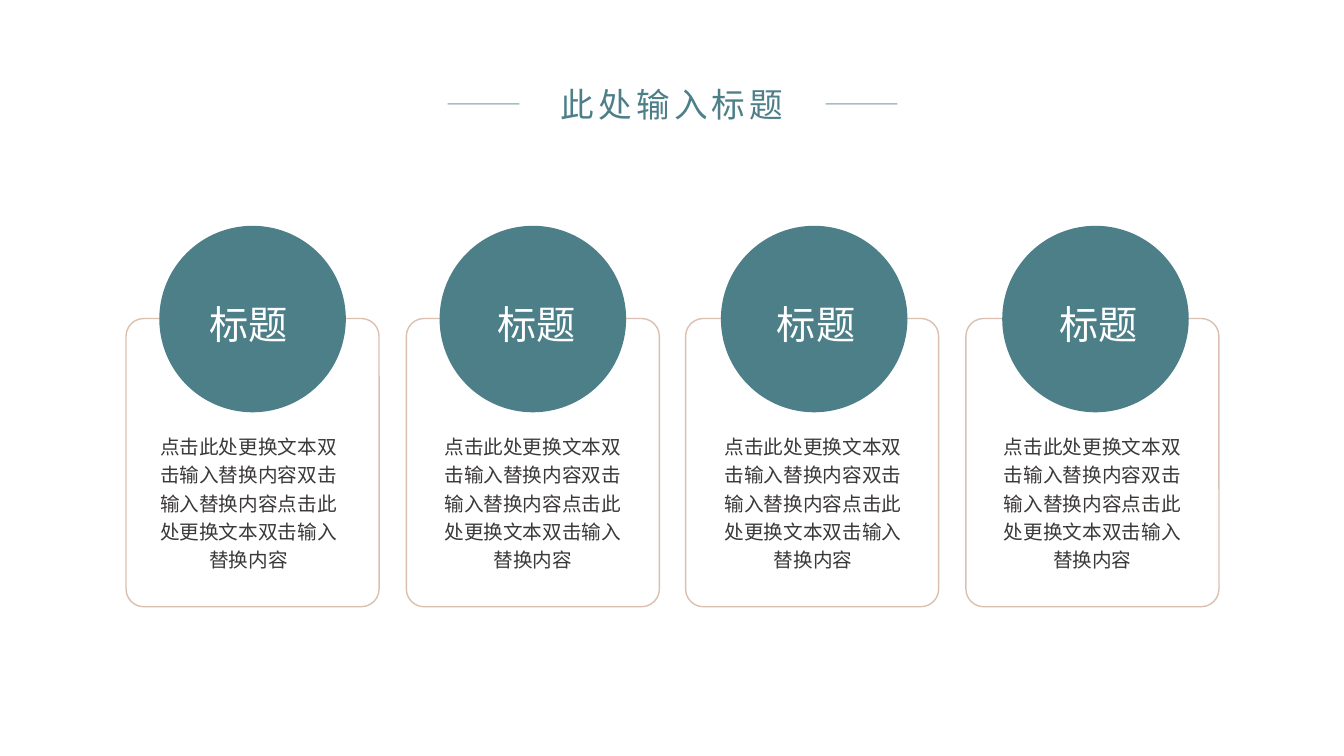
from dataclasses import dataclass

from pptx import Presentation
from pptx.dml.color import RGBColor
from pptx.enum.shapes import MSO_CONNECTOR, MSO_SHAPE
from pptx.enum.text import MSO_ANCHOR, MSO_AUTO_SIZE, PP_ALIGN
from pptx.oxml.ns import qn
from pptx.util import Inches, Pt


@dataclass(frozen=True)
class Theme:
    font: str = "Noto Sans CJK SC"
    teal: str = "4D7F89"
    brown: str = "A2633C"
    white: str = "FFFFFF"
    ink: str = "3B3838"
    title_size: int = 24
    heading_size: int = 28
    body_size: int = 14
    line_width: int = 1


@dataclass(frozen=True)
class Box:
    left: float
    top: float
    width: float
    height: float

    def lengths(self):
        return [Inches(v) for v in (self.left, self.top, self.width, self.height)]


@dataclass(frozen=True)
class Card:
    frame_left: float
    circle_left: float
    heading_left: float
    body_left: float
    heading: str = "标题"
    body: str = "点击此处更换文本双击输入替换内容双击输入替换内容点击此处更换文本双击输入替换内容"


THEME = Theme()
CARDS = [
    Card(1.25, 1.58, 1.8, 1.44),
    Card(4.03, 4.36, 4.66, 4.26),
    Card(6.8, 7.15, 7.43, 7.04),
    Card(9.58, 9.94, 10.23, 9.81),
]
RULE_LEFTS = (4.44, 8.19)
RULE_WIDTH, RULE_TOP = 0.71, 1.03


def style_line(line, color: str, opacity: int) -> None:
    line.color.rgb = RGBColor.from_string(color)
    line.width = Pt(THEME.line_width)
    srgb = line.fill._xPr.find(qn("a:solidFill")).find(qn("a:srgbClr"))
    alpha = srgb.makeelement(qn("a:alpha"), {"val": str(opacity * 1000)})
    srgb.append(alpha)


def write(sp, text: str, size: int, color: str, inset: float = 0.1,
          anchor: MSO_ANCHOR = MSO_ANCHOR.MIDDLE, spacing: float = 1.2):
    """Fill a shape with one centred paragraph and return its run."""
    tf = sp.text_frame
    frame_format = {
        "word_wrap": True, "auto_size": MSO_AUTO_SIZE.NONE, "vertical_anchor": anchor,
        "margin_left": Inches(inset), "margin_right": Inches(inset),
        "margin_top": Inches(inset / 2), "margin_bottom": Inches(inset / 2),
    }
    for name, value in frame_format.items():
        setattr(tf, name, value)
    p = tf.paragraphs[0]
    p.alignment, p.line_spacing, p.space_before = PP_ALIGN.CENTER, spacing, Pt(0)
    r = p.add_run()
    r.text = text
    for name, value in {"name": THEME.font, "size": Pt(size), "bold": False}.items():
        setattr(r.font, name, value)
    r.font.color.rgb = RGBColor.from_string(color)
    rpr = r._r.get_or_add_rPr()
    rpr.append(rpr.makeelement(qn("a:ea"), {"typeface": THEME.font}))
    return r


def add_frame(s, card: Card) -> None:
    sp = s.shapes.add_shape(MSO_SHAPE.ROUNDED_RECTANGLE,
                            *Box(card.frame_left, 3.16, 2.51, 2.86).lengths())
    sp.adjustments[0] = 0.07
    sp.shadow.inherit = False
    sp.fill.background()
    style_line(sp.line, THEME.brown, 40)


def add_circle(s, card: Card) -> None:
    sp = s.shapes.add_shape(MSO_SHAPE.OVAL,
                            *Box(card.circle_left, 2.24, 1.85, 1.85).lengths())
    sp.shadow.inherit = False
    sp.fill.solid()
    sp.fill.fore_color.rgb = RGBColor.from_string(THEME.teal)
    sp.line.fill.background()


def add_texts(s, card: Card) -> None:
    heading = s.shapes.add_textbox(*Box(card.heading_left, 2.95, 1.33, 0.43).lengths())
    write(heading, card.heading, THEME.heading_size, THEME.white, inset=0)
    body = s.shapes.add_textbox(*Box(card.body_left, 4.35, 2.05, 1.24).lengths())
    write(body, card.body, THEME.body_size, THEME.ink)


def add_rule(s, left: float) -> None:
    line = s.shapes.add_connector(MSO_CONNECTOR.STRAIGHT, Inches(left), Inches(RULE_TOP),
                                  Inches(left + RULE_WIDTH), Inches(RULE_TOP))
    style_line(line.line, THEME.teal, 50)
    sppr = line._element.spPr
    sppr.append(sppr.makeelement(qn("a:effectLst"), {}))


def format_title(s) -> None:
    title = s.shapes.title
    title.left, title.top, title.width, title.height = Box(5.19, 0.78, 2.95, 0.5).lengths()
    r = write(title, "此处输入标题", THEME.title_size, THEME.teal,
              anchor=MSO_ANCHOR.TOP, spacing=1.0)
    r._r.get_or_add_rPr().set("spc", "300")


def main() -> None:
    prs = Presentation()
    prs.slide_width, prs.slide_height = Inches(13.33), Inches(7.5)
    s = prs.slides.add_slide(prs.slide_layouts[5])
    format_title(s)
    for left in RULE_LEFTS:
        add_rule(s, left)
    for card in CARDS:
        add_frame(s, card)
        add_circle(s, card)
        add_texts(s, card)
    prs.save("out.pptx")


if __name__ == "__main__":
    main()
